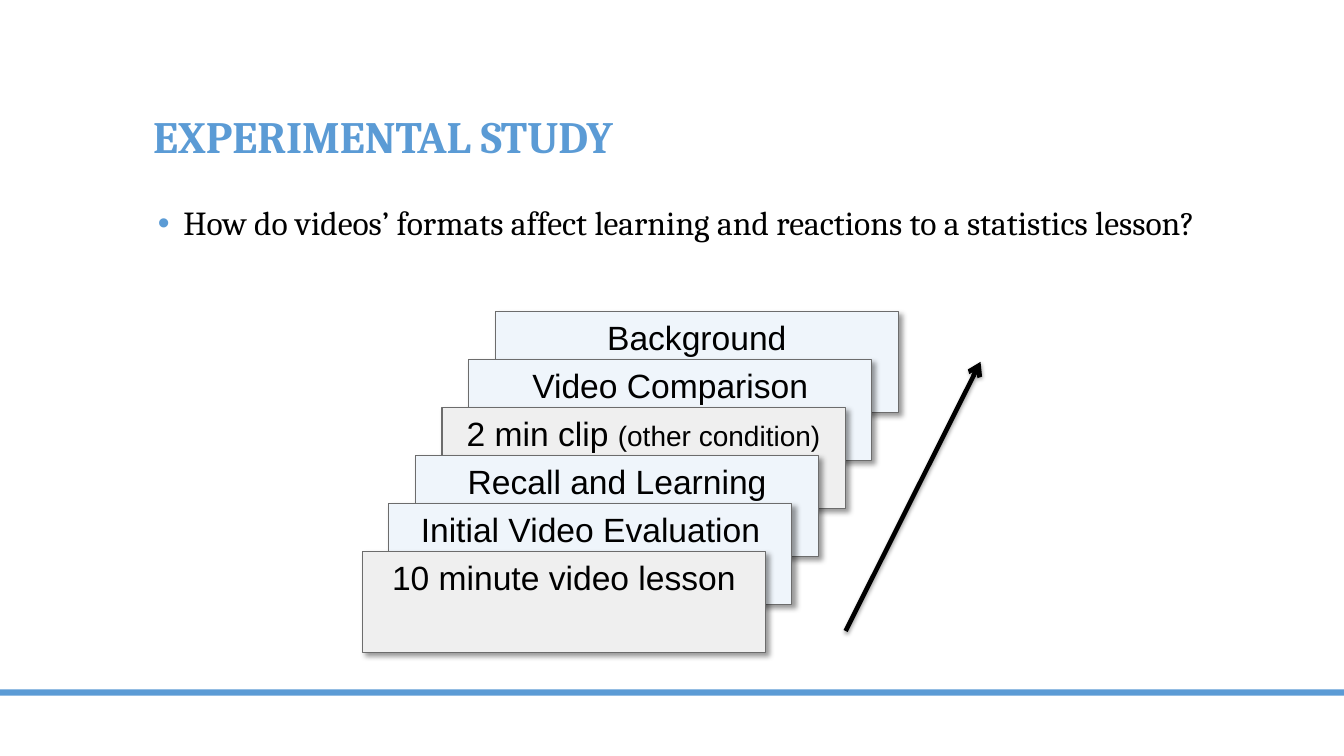
from dataclasses import dataclass

from pptx import Presentation
from pptx.dml.color import RGBColor as RGB
from pptx.enum.shapes import MSO_CONNECTOR as Link, MSO_SHAPE as Form
from pptx.enum.text import MSO_ANCHOR as Anchor, PP_ALIGN as Align
from pptx.oxml.ns import qn
from pptx.oxml.xmlchemy import OxmlElement as Node
from pptx.slide import Slide
from pptx.util import Cm, Pt

BLUE = RGB(0x5B, 0x9B, 0xD5)
PALE = RGB(0xEF, 0xF5, 0xFB)
GRAY = RGB(0xEF, 0xEF, 0xEF)
EDGE = RGB(0x6C, 0x6C, 0x6C)
BLACK = RGB(0, 0, 0)

WIDTH, HEIGHT = 33.87, 19.05
CARD_W, CARD_H = 10.16, 2.54
CARD_X, CARD_Y = 12.48, 7.85
STEP_X, STEP_Y = -0.67, 1.21

HEAD = {"name": "Cambria", "size": Pt(32), "bold": True}
BODY = {"name": "Cambria", "size": Pt(24)}
LABEL = {"name": "Arial", "size": Pt(24)}
NOTE = {"name": "Arial", "size": Pt(20)}


@dataclass
class Card:
    label: str
    fill: RGB = PALE
    note: str = ""


@dataclass
class Shade:
    alpha: int
    blur: float
    dist: float
    angle: int


CARDS = [
    Card("Background"),
    Card("Video Comparison"),
    Card("2 min clip ", GRAY, "(other condition)"),
    Card("Recall and Learning"),
    Card("Initial Video Evaluation"),
    Card("10 minute video lesson", GRAY),
]


def add_node(parent, tag: str, **attrs):
    """Append an XML element and return it."""
    node = Node(tag)
    for key, value in attrs.items():
        node.set(key, str(value))
    parent.append(node)
    return node


def add_run(para, text: str, style: dict, color: RGB = BLACK) -> None:
    run = para.add_run()
    run.text = text
    for key, value in style.items():
        setattr(run.font, key, value)
    run.font.color.rgb = color


def add_shade(effects, shade: Shade) -> None:
    """Put a black outer shadow into an effect list."""
    outer = add_node(effects, "a:outerShdw", blurRad=Pt(shade.blur),
                     dist=Pt(shade.dist), dir=shade.angle * 60000,
                     algn="ctr", rotWithShape=0)
    color = add_node(outer, "a:srgbClr", val=BLACK)
    add_node(color, "a:alpha", val=shade.alpha * 1000)


def add_rect(slide: Slide, x: float, y: float, w: float, h: float, fill: RGB):
    rect = slide.shapes.add_shape(Form.RECTANGLE, Cm(x), Cm(y), Cm(w), Cm(h))
    rect.shadow.inherit = False
    rect.fill.solid()
    rect.fill.fore_color.rgb = fill
    rect.line.fill.background()
    return rect


def add_box(slide: Slide, x: float, y: float, w: float, h: float, anchor: Anchor):
    """Add a wrapped text box and return its first paragraph."""
    frame = slide.shapes.add_textbox(Cm(x), Cm(y), Cm(w), Cm(h)).text_frame
    frame.word_wrap = True
    frame.vertical_anchor = anchor
    para = frame.paragraphs[0]
    para.line_spacing = 0.9
    return para


def add_bullet(para) -> None:
    props = para._p.get_or_add_pPr()
    props.set("marL", str(Cm(0.76)))
    props.set("indent", str(Cm(-0.64)))
    add_node(add_node(props, "a:buClr"), "a:srgbClr", val=BLUE)
    add_node(props, "a:buFont", typeface="Arial")
    add_node(props, "a:buChar", char="•")


def add_card(slide: Slide, card: Card, x: float, y: float) -> None:
    rect = add_rect(slide, x, y, CARD_W, CARD_H, card.fill)
    rect.line.color.rgb = EDGE
    rect.line.width = Pt(0.75)
    add_shade(rect._element.spPr.find(qn("a:effectLst")), Shade(40, 4, 3, 45))
    frame = rect.text_frame
    frame.word_wrap = True
    frame.vertical_anchor = Anchor.TOP
    para = frame.paragraphs[0]
    para.alignment = Align.CENTER
    add_run(para, card.label, LABEL)
    if card.note:
        add_run(para, card.note, NOTE)


def add_arrow(slide: Slide, x1: float, y1: float, x2: float, y2: float) -> None:
    arrow = slide.shapes.add_connector(Link.STRAIGHT, Cm(x1), Cm(y1), Cm(x2), Cm(y2))
    arrow.line.color.rgb = BLACK
    arrow.line.width = Pt(3.25)
    add_node(arrow.line._get_or_add_ln(), "a:tailEnd", type="arrow")
    add_shade(add_node(arrow._element.spPr, "a:effectLst"), Shade(38, 3, 1.6, 90))


def main() -> None:
    deck = Presentation()
    deck.slide_width, deck.slide_height = Cm(WIDTH), Cm(HEIGHT)
    slide = deck.slides.add_slide(deck.slide_layouts[6])

    add_rect(slide, 0, 17.37, WIDTH, 0.16, BLUE)
    title = add_box(slide, 3.61, 1.07, 26.67, 3.18, Anchor.BOTTOM)
    add_run(title, "EXPERIMENTAL STUDY", HEAD, BLUE)
    point = add_box(slide, 3.61, 5.08, 28.14, 11.43, Anchor.TOP)
    add_bullet(point)
    add_run(point, "How do videos’ formats affect learning and reactions "
                   "to a statistics lesson?", BODY)

    for i, card in enumerate(CARDS):
        add_card(slide, card, CARD_X + i * STEP_X, CARD_Y + i * STEP_Y)
    add_arrow(slide, 21.31, 15.9, 24.71, 9.12)

    deck.save("out.pptx")


if __name__ == "__main__":
    main()
